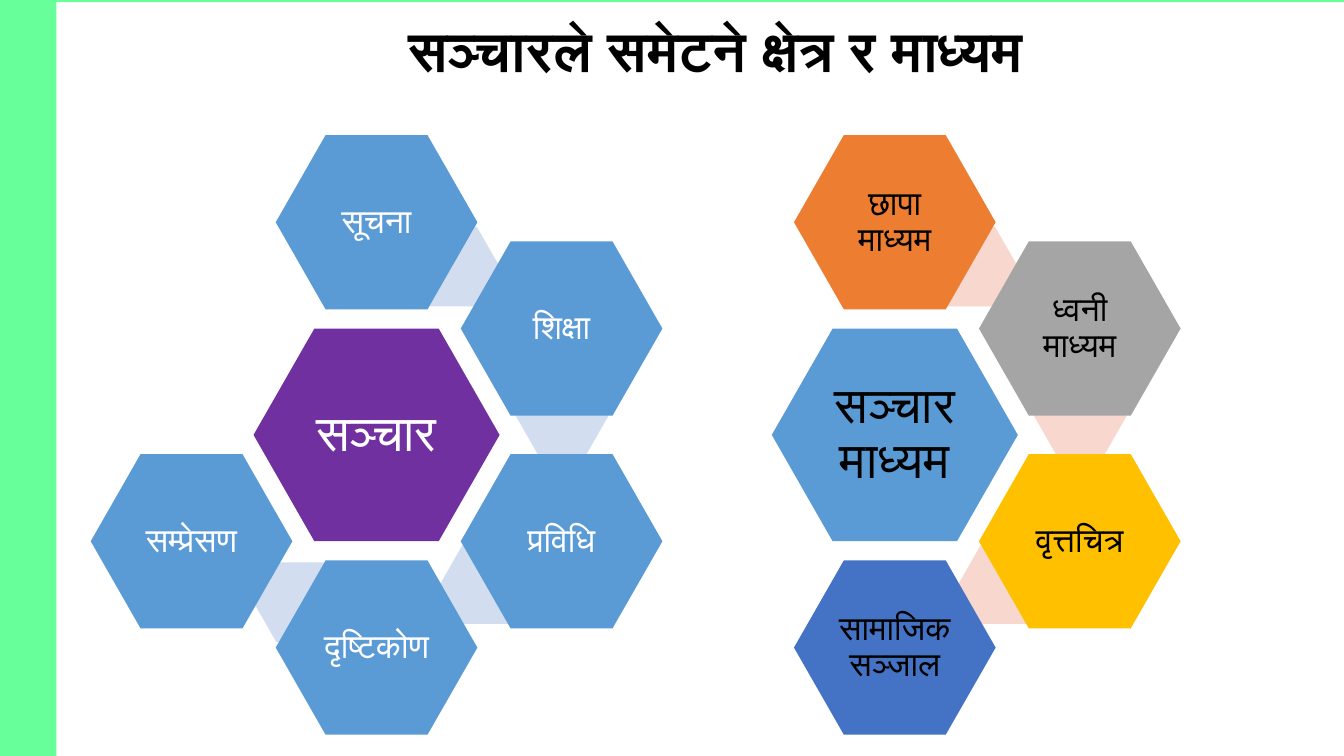
from collections import namedtuple
from dataclasses import dataclass

from pptx import Presentation
from pptx.dml.color import RGBColor
from pptx.enum.shapes import MSO_SHAPE
from pptx.enum.text import MSO_ANCHOR, MSO_AUTO_SIZE, PP_ALIGN
from pptx.util import Inches, Pt

Box = namedtuple("Box", "left top width height")
Slot = namedtuple("Slot", "column row link_x link_y")
Node = namedtuple("Node", "text fill")


@dataclass(frozen=True)
class Theme:
    title_font: str = "Lato"
    body_font: str = "Calibri"
    title_size: int = 40
    core_size: int = 36
    node_size: int = 24
    black: str = "000000"
    white: str = "FFFFFF"
    green: str = "66FF99"
    purple: str = "7030A0"
    blue: str = "5B9BD5"
    orange: str = "ED7D31"
    gray: str = "A5A5A5"
    gold: str = "FFC000"
    indigo: str = "4472C4"
    pale_blue: str = "D2DEEF"
    pale_orange: str = "F8D7CE"


THEME = Theme()
SLIDE = Box(0, 0, 13.33, 7.5)

CORE_SIZE = (2.44, 2.11)
NODE_SIZE = (2, 1.73)
LINK_SIZE = (0.92, 0.79)
LAST_COLUMN, LAST_ROW = 2, 4
# Clockwise; each link is offset from the core's centre and leads to the next node.
SLOTS = [
    Slot(1, 0, 0.76, -1.67),
    Slot(2, 1, 1.84, -0.19),
    Slot(2, 3, 1.09, 1.48),
    Slot(1, 4, -0.76, 1.66),
    Slot(0, 3, None, None),
]


def add_filled_shape(shapes, kind, box, color):
    shape = shapes.add_shape(kind, *(Inches(length) for length in box))
    shape.shadow.inherit = False
    shape.fill.solid()
    shape.fill.fore_color.rgb = RGBColor.from_string(color)
    shape.line.fill.background()
    return shape


def format_text(shape, font_name, size, color, bold=False):
    """Centre the shape's text both ways and style its runs."""
    text_frame = shape.text_frame
    text_frame.word_wrap = True
    text_frame.auto_size = MSO_AUTO_SIZE.NONE
    text_frame.vertical_anchor = MSO_ANCHOR.MIDDLE
    for paragraph in text_frame.paragraphs:
        paragraph.alignment = PP_ALIGN.CENTER
        paragraph.line_spacing = 0.9
        for run in paragraph.runs:
            run.font.name = font_name
            run.font.size = Pt(size)
            run.font.bold = bold
            run.font.color.rgb = RGBColor.from_string(color)


def add_hexagon(shapes, center_x, center_y, size, color):
    width, height = size
    box = Box(center_x - width / 2, center_y - height / 2, width, height)
    hexagon = add_filled_shape(shapes, MSO_SHAPE.HEXAGON, box, color)
    hexagon.adjustments[0] = 0.286
    return hexagon


def add_label(hexagon, text, size, color, margin):
    text_frame = hexagon.text_frame
    text_frame.text = text
    text_frame.margin_left = text_frame.margin_right = Inches(margin)
    text_frame.margin_top = text_frame.margin_bottom = Inches(margin)
    format_text(hexagon, THEME.body_font, size, color)


def add_frame(slide, box):
    """Draw the green bands along the left and top edges."""
    bands = [
        Box(box.left, box.top, 0.56, box.height),
        Box(box.left, box.top, box.width, 0.02),
    ]
    for band in bands:
        add_filled_shape(slide.shapes, MSO_SHAPE.RECTANGLE, band, THEME.green)


def add_title(slide, box, text):
    title = slide.shapes.title
    title.left, title.top, title.width, title.height = map(Inches, box)
    title.text_frame.text = text
    format_text(title, THEME.title_font, THEME.title_size, THEME.black, bold=True)


def add_hexagon_cluster(slide, box, core, nodes, link_color, text_color):
    """Place nodes clockwise around a core hexagon, joined by pale links."""
    shapes = slide.shapes.add_group_shape().shapes
    node_width, node_height = NODE_SIZE
    column_step = (box.width - node_width) / LAST_COLUMN
    row_step = (box.height - node_height) / LAST_ROW
    core_x = box.left + box.width / 2
    core_y = box.top + box.height / 2

    hexagon = add_hexagon(shapes, core_x, core_y, CORE_SIZE, core.fill)
    add_label(hexagon, core.text, THEME.core_size, text_color, 0.05)

    for index, (node, slot) in enumerate(zip(nodes, SLOTS)):
        if index < len(nodes) - 1:
            add_hexagon(shapes, core_x + slot.link_x, core_y + slot.link_y,
                        LINK_SIZE, link_color)
        center_x = box.left + node_width / 2 + slot.column * column_step
        center_y = box.top + node_height / 2 + slot.row * row_step
        hexagon = add_hexagon(shapes, center_x, center_y, NODE_SIZE, node.fill)
        add_label(hexagon, node.text, THEME.node_size, text_color, 0.03)


def build_communication_slide(presentation):
    slide = presentation.slides.add_slide(presentation.slide_layouts[5])
    add_frame(slide, SLIDE)
    add_title(slide, Box(1.77, 0.15, 10.65, 0.75), "सञ्चारले समेटने क्षेत्र र माध्यम")

    fields = ["सूचना", "शिक्षा", "प्रविधि", "दृष्टिकोण", "सम्प्रेसण"]
    add_hexagon_cluster(
        slide, Box(0.9, 1.34, 5.67, 5.95),
        Node("सञ्चार", THEME.purple),
        [Node(field, THEME.blue) for field in fields],
        THEME.pale_blue, THEME.white)

    media = [
        Node("छापा माध्यम", THEME.orange),
        Node("ध्वनी माध्यम", THEME.gray),
        Node("वृत्तचित्र", THEME.gold),
        Node("सामाजिक सञ्जाल", THEME.indigo),
    ]
    add_hexagon_cluster(
        slide, Box(6.04, 1.34, 5.67, 5.95),
        Node("सञ्चार माध्यम", THEME.blue), media,
        THEME.pale_orange, THEME.black)


def main():
    presentation = Presentation()
    presentation.slide_width = Inches(SLIDE.width)
    presentation.slide_height = Inches(SLIDE.height)
    build_communication_slide(presentation)
    presentation.save("out.pptx")


if __name__ == "__main__":
    main()
